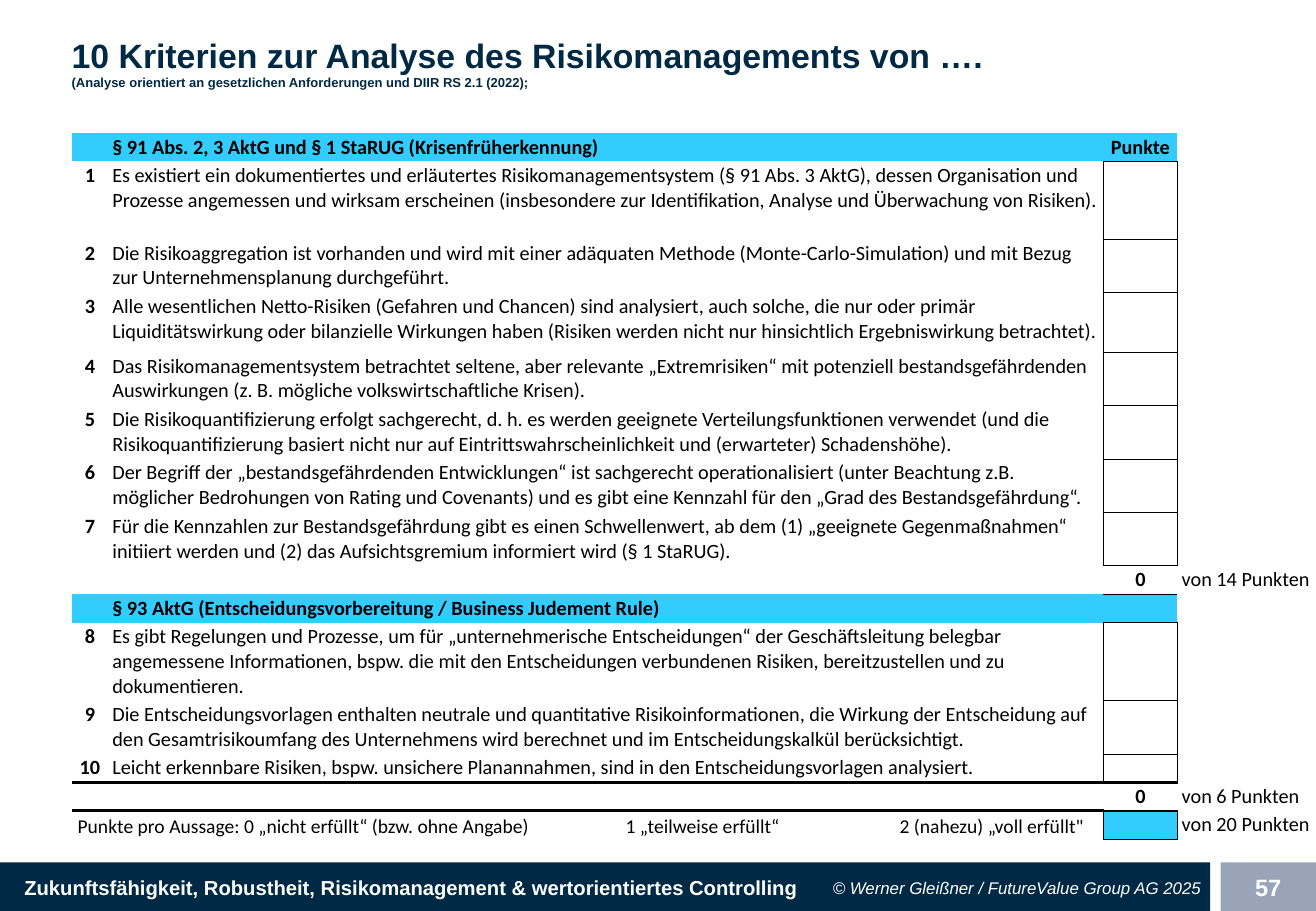
from collections import defaultdict

from lxml import etree
from pptx import Presentation
from pptx import util as u
from pptx.dml import color
from pptx.enum import shapes, text
from pptx.oxml import ns

SCALE = 4572
NAVY, GREY, CYAN, WHITE, BLACK = "002945", "99A4B9", "33CCFF", "FFFFFF", "000000"
PLAIN_TABLE = "{2D5ABB26-0587-4C30-8999-92F81FD0307C}"
LEFT, CENTER, RIGHT = text.PP_ALIGN.LEFT, text.PP_ALIGN.CENTER, text.PP_ALIGN.RIGHT
TOP, MIDDLE = text.MSO_ANCHOR.TOP, text.MSO_ANCHOR.MIDDLE
NEIGHBOURS = {"L": (0, -1, "R"), "R": (0, 1, "L"), "T": (-1, 0, "B"), "B": (1, 0, "T")}
COLUMNS = [60, 1638, 122, 228]
LINE_HEIGHTS = {1: 47, 2: 88, 3: 128}
CRISIS = [
    (3, "Es existiert ein dokumentiertes und erläutertes Risikomanagementsystem (§ 91 Abs. 3 AktG), dessen Organisation und Prozesse angemessen und wirksam erscheinen (insbesondere zur Identifikation, Analyse und Überwachung von Risiken)."),
    (2, "Die Risikoaggregation ist vorhanden und wird mit einer adäquaten Methode (Monte-Carlo-Simulation) und mit Bezug zur Unternehmensplanung durchgeführt."),
    (2, "Alle wesentlichen Netto-Risiken (Gefahren und Chancen) sind analysiert, auch solche, die nur oder primär Liquiditätswirkung oder bilanzielle Wirkungen haben (Risiken werden nicht nur hinsichtlich Ergebniswirkung betrachtet)."),
    (2, "Das Risikomanagementsystem betrachtet seltene, aber relevante „Extremrisiken“ mit potenziell bestandsgefährdenden Auswirkungen (z. B. mögliche volkswirtschaftliche Krisen)."),
    (2, "Die Risikoquantifizierung erfolgt sachgerecht, d. h. es werden geeignete Verteilungsfunktionen verwendet (und die Risikoquantifizierung basiert nicht nur auf Eintrittswahrscheinlichkeit und (erwarteter) Schadenshöhe)."),
    (2, "Der Begriff der „bestandsgefährdenden Entwicklungen“ ist sachgerecht operationalisiert (unter Beachtung z.B. möglicher Bedrohungen von Rating und Covenants) und es gibt eine Kennzahl für den „Grad des Bestandsgefährdung“."),
    (2, "Für die Kennzahlen zur Bestandsgefährdung gibt es einen Schwellenwert, ab dem (1) „geeignete Gegenmaßnahmen“ initiiert werden und (2) das Aufsichtsgremium informiert wird (§ 1 StaRUG)."),
]
DECISIONS = [
    (3, "Es gibt Regelungen und Prozesse, um für „unternehmerische Entscheidungen“ der Geschäftsleitung belegbar angemessene Informationen, bspw. die mit den Entscheidungen verbundenen Risiken, bereitzustellen und zu dokumentieren."),
    (2, "Die Entscheidungsvorlagen enthalten neutrale und quantitative Risikoinformationen, die Wirkung der Entscheidung auf den Gesamtrisikoumfang des Unternehmens wird berechnet und im Entscheidungskalkül berücksichtigt."),
    (1, "Leicht erkennbare Risiken, bspw. unsichere Planannahmen, sind in den Entscheidungsvorlagen analysiert."),
]


def px(n):
    return u.Emu(n * SCALE)


def rgb(value):
    return color.RGBColor.from_string(value)


def add_text(p, content, size=12, font="Calibri", fill=BLACK, bold=False, italic=False, align=LEFT):
    p.alignment = align
    if not content:
        etree.SubElement(p._p, ns.qn("a:endParaRPr"), sz=str(size * 100))
        return
    r = p.add_run()
    r.text = content
    r.font.size = u.Pt(size)
    r.font.name = font
    r.font.bold = bold
    r.font.italic = italic
    r.font.color.rgb = rgb(fill)


def prepare_frame(sp, anchor=MIDDLE, inset=16):
    tf = sp.text_frame
    tf.word_wrap = True
    tf.vertical_anchor = anchor
    tf.margin_left, tf.margin_right = px(inset), px(16)
    tf.margin_top = tf.margin_bottom = px(8)
    return tf.paragraphs[0]


def add_box(s, at, anchor=MIDDLE, inset=16):
    return prepare_frame(s.shapes.add_textbox(*map(px, at)), anchor, inset)


def add_bar(s, at, fill, inset=16):
    sp = s.shapes.add_shape(shapes.MSO_SHAPE.RECTANGLE, *map(px, at))
    sp.shadow.inherit = False
    sp.fill.solid()
    sp.fill.fore_color.rgb = rgb(fill)
    sp.line.fill.background()
    return prepare_frame(sp, inset=inset)


def add_tabs(p, stops):
    tabs = etree.SubElement(p._p.get_or_add_pPr(), ns.qn("a:tabLst"))
    for stop in stops:
        etree.SubElement(tabs, ns.qn("a:tab"), pos=str(px(stop)), algn="l")


def criteria_rows():
    rows = [(47, "", "§ 91 Abs. 2, 3 AktG und § 1 StaRUG (Krisenfrüherkennung)", "Punkte", "")]
    rows += [(LINE_HEIGHTS[n], str(i), t, "", "") for i, (n, t) in enumerate(CRISIS, 1)]
    rows[3] = (98, *rows[3][1:])
    rows.append((47, "", "", "0", "von 14 Punkten"))
    rows.append((47, "", "§ 93 AktG (Entscheidungsvorbereitung / Business Judement Rule)", "", ""))
    rows += [(LINE_HEIGHTS[n], str(i), t, "", "") for i, (n, t) in enumerate(DECISIONS, len(CRISIS) + 1)]
    rows.append((47, "", "", "0", "von 6 Punkten"))
    rows.append((47, "", "", "", "von 20 Punkten"))
    return rows


def plan_borders(rows):
    borders = defaultdict(dict)

    def edge(r, c, side, width):
        dr, dc, opposite = NEIGHBOURS[side]
        borders[r, c][side] = width
        borders[r + dr, c + dc][opposite] = width

    numbered = [r for r, row in enumerate(rows) if row[1]]
    for r in numbered:
        for side in NEIGHBOURS:
            edge(r, 2, side, 0.5)
    for c in range(3):
        edge(numbered[-1], c, "B", 2)
    for side in NEIGHBOURS:
        edge(len(rows) - 1, 2, side, 1)
    return borders


def draw_borders(cell, widths):
    tc_pr = cell._tc.get_or_add_tcPr()
    for side in NEIGHBOURS:
        if side in widths:
            ln = etree.SubElement(tc_pr, ns.qn("a:ln" + side), w=str(u.Pt(widths[side])))
            fill = etree.SubElement(ln, ns.qn("a:solidFill"))
            etree.SubElement(fill, ns.qn("a:srgbClr"), val=BLACK)


def add_criteria_table(s):
    rows = criteria_rows()
    borders = plan_borders(rows)
    headers = [r for r, row in enumerate(rows) if row[2] and not row[1]]
    size = sum(COLUMNS), sum(row[0] for row in rows)
    tbl = s.shapes.add_table(len(rows), len(COLUMNS), *map(px, (118, 219, *size))).table
    tbl._tbl.tblPr.find(ns.qn("a:tableStyleId")).text = PLAIN_TABLE
    tbl.first_row = tbl.horz_banding = False
    for c, width in enumerate(COLUMNS):
        tbl.columns[c].width = px(width)
    for r, (height, *labels) in enumerate(rows):
        tbl.rows[r].height = px(height)
        for c, label in enumerate(labels):
            cell = tbl.cell(r, c)
            cell.margin_left = cell.margin_right = px(7)
            cell.margin_top = cell.margin_bottom = px(3)
            add_text(cell.text_frame.paragraphs[0], label,
                     bold=c in (0, 2) or r in headers,
                     align=CENTER if c in (0, 2) else LEFT)
            draw_borders(cell, borders[r, c])
            if (r in headers and c < 3) or (r, c) == (len(rows) - 1, 2):
                cell.fill.solid()
                cell.fill.fore_color.rgb = rgb(CYAN)
            else:
                cell.fill.background()


def add_footer(s):
    add_text(add_bar(s, (0, 1420, 1992, 82), NAVY, inset=40),
             "Zukunftsfähigkeit, Robustheit, Risikomanagement & wertorientiertes Controlling",
             font="Arial", fill=WHITE, bold=True)
    add_text(add_bar(s, (2009, 1420, 157, 82), GREY), "57",
             size=14, font="Arial", fill=WHITE, bold=True, align=CENTER)
    add_text(add_box(s, (1126, 1420, 866, 82)), "© Werner Gleißner / FutureValue Group AG 2025",
             size=10, font="Arial", fill=WHITE, italic=True, align=RIGHT)


def add_title(s):
    p = add_box(s, (102, 32, 1890, 142))
    add_text(p, "10 Kriterien zur Analyse des Risikomanagements von ….",
             size=20, font="Arial", fill=NAVY, bold=True)
    p.add_line_break()
    add_text(p, "(Analyse orientiert an gesetzlichen Anforderungen und DIIR RS 2.1 (2022);",
             size=7.7, font="Arial", fill=NAVY, bold=True)


def add_scale_note(s):
    p = add_box(s, (108, 1332, 1782, 60), anchor=TOP, inset=20)
    add_tabs(p, (902, 1353))
    add_text(p, "Punkte pro Aussage: 0 „nicht erfüllt“ (bzw. ohne Angabe)\t1 „teilweise erfüllt“\t2 (nahezu) „voll erfüllt\"",
             size=11.6)


def main():
    prs = Presentation()
    prs.slide_width, prs.slide_height = px(2166), px(1500)
    s = prs.slides.add_slide(prs.slide_layouts[6])
    add_footer(s)
    add_title(s)
    add_scale_note(s)
    add_criteria_table(s)
    prs.save("out.pptx")


if __name__ == "__main__":
    main()
